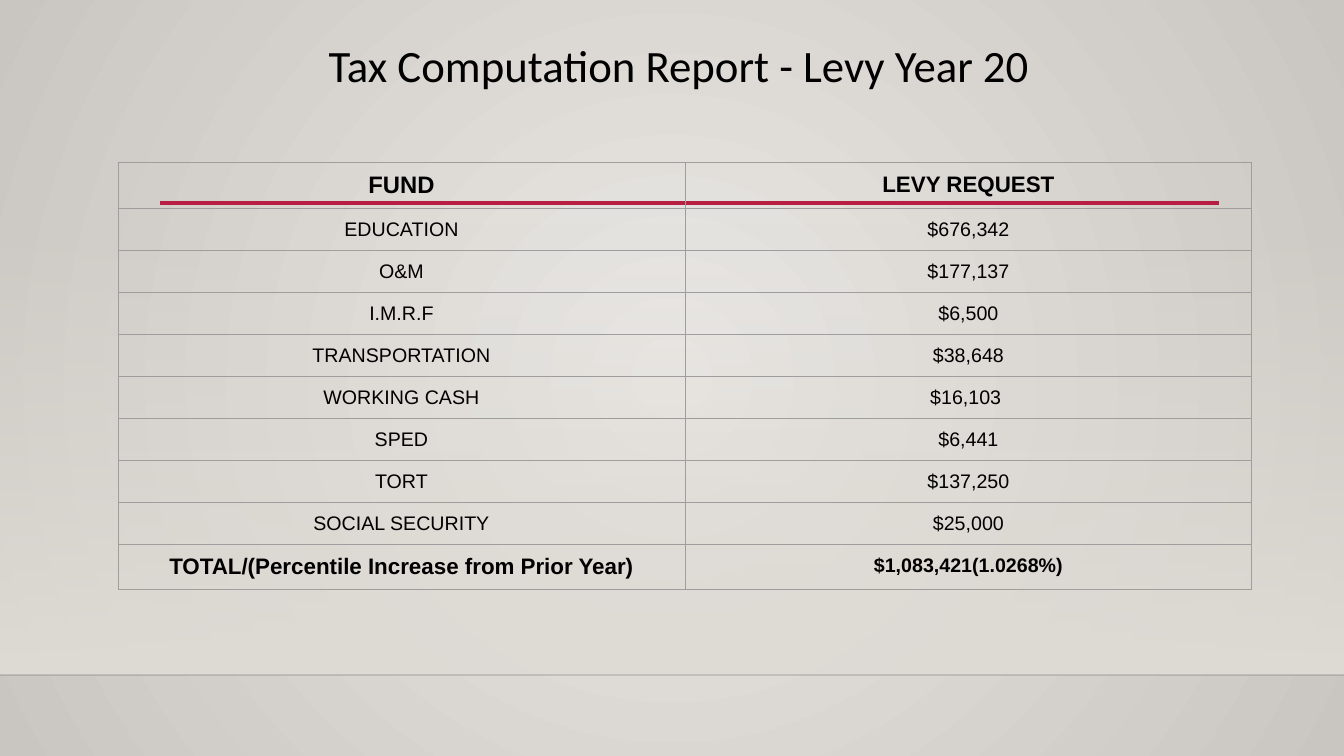
from dataclasses import dataclass

from lxml.etree import SubElement
from pptx import Presentation
from pptx.dml.color import RGBColor
from pptx.enum.shapes import MSO_CONNECTOR, MSO_SHAPE
from pptx.enum.text import MSO_ANCHOR, PP_ALIGN
from pptx.oxml import parse_xml
from pptx.oxml.ns import nsdecls, qn
from pptx.util import Pt

TITLE = "Tax Computation Report - Levy Year 20"
HEADINGS = ("FUND", "LEVY REQUEST")
LEVIES = [
    ("EDUCATION", "$676,342"),
    ("O&M", "$177,137"),
    ("I.M.R.F", "$6,500"),
    ("TRANSPORTATION", "$38,648"),
    ("WORKING CASH", "$16,103 "),
    ("SPED", "$6,441"),
    ("TORT", "$137,250"),
    ("SOCIAL SECURITY", "$25,000"),
]
TOTAL = ("TOTAL/(Percentile Increase from Prior Year)", "$1,083,421(1.0268%)")


@dataclass(frozen=True)
class Theme:
    title_font: str = "Calibri"
    table_font: str = "Arial"
    ink: str = "000000"
    accent: str = "B71E42"
    border: str = "9E9E9E"
    floor_edge: str = "000001"
    glow: str = "EBE9E6"
    rim: str = "C9C5C0"
    wall: str = "DFDBD5"
    title_size: int = 32
    heading_sizes: tuple = (17, 16)
    levy_sizes: tuple = (14, 14)
    total_sizes: tuple = (16, 14)


THEME = Theme()
SLIDE_W, SLIDE_H = 1344, 756
WALL_TOP, FLOOR_TOP = 223, 675
TABLE_LEFT, TABLE_TOP, COLUMN_W, ROW_H = 118, 162, 567, 42
CELL_INSET = 10


def px(length):
    return round(length * 914400 / 100.8)


def set_gradient(fill_parent, stops, direction):
    """Replace the solid fill of fill_parent; stops are (position, colour, opacity) in percent."""
    stop_xml = "".join(
        f'<a:gs pos="{position * 1000}"><a:srgbClr val="{colour}">'
        f'<a:alpha val="{opacity * 1000}"/></a:srgbClr></a:gs>'
        for position, colour, opacity in stops
    )
    gradient = parse_xml(
        f'<a:gradFill {nsdecls("a")} rotWithShape="1">'
        f"<a:gsLst>{stop_xml}</a:gsLst>{direction}</a:gradFill>"
    )
    solid = fill_parent.find(qn("a:solidFill"))
    fill_parent.replace(solid, gradient)


def add_rule(slide, left, right, y, colour, width, opacity=100):
    rule = slide.shapes.add_connector(
        MSO_CONNECTOR.STRAIGHT, px(left), px(y), px(right), px(y)
    )
    rule.line.color.rgb = RGBColor.from_string(colour)
    rule.line.width = Pt(width)
    properties = rule._element.spPr
    SubElement(properties, qn("a:effectLst"))
    tint = properties.find(".//" + qn("a:srgbClr"))
    SubElement(tint, qn("a:alpha"), val=str(opacity * 1000))


def write(frame, text, font_name, size, bold=False):
    paragraph = frame.paragraphs[0]
    paragraph.alignment = PP_ALIGN.CENTER
    run = paragraph.add_run()
    run.text = text
    run.font.name = font_name
    run.font.size = Pt(size)
    run.font.bold = bold
    run.font.color.rgb = RGBColor.from_string(THEME.ink)
    return paragraph


def add_borders(cell):
    properties = cell._tc.get_or_add_tcPr()
    for position, side in enumerate(("lnL", "lnR", "lnT", "lnB")):
        properties.insert(position, parse_xml(
            f'<a:{side} {nsdecls("a")} w="{Pt(0.75)}"><a:solidFill>'
            f'<a:srgbClr val="{THEME.border}"/></a:solidFill></a:{side}>'
        ))


def add_backdrop(slide):
    slide.background.fill.solid()
    set_gradient(
        slide._element.cSld.bg.bgPr,
        [(0, THEME.glow, 100), (100, THEME.rim, 100)],
        '<a:path path="circle"><a:fillToRect l="50000" t="50000" r="50000" b="50000"/></a:path>',
    )
    wall = slide.shapes.add_shape(
        MSO_SHAPE.RECTANGLE, 0, px(WALL_TOP), px(SLIDE_W), px(FLOOR_TOP - WALL_TOP)
    )
    wall.shadow.inherit = False
    wall.line.fill.background()
    wall.fill.solid()
    set_gradient(
        wall._element.spPr,
        [(0, THEME.wall, 0), (100, THEME.wall, 100)],
        '<a:lin ang="5400000" scaled="0"/>',
    )
    add_rule(slide, 0, SLIDE_W, FLOOR_TOP, THEME.floor_edge, 1, opacity=20)
    add_rule(slide, 160, 1219, 203, THEME.accent, 2.5)


def add_title(slide):
    title = slide.shapes.title
    title.left, title.top, title.width, title.height = map(px, (150, 39, 1058, 71))
    frame = title.text_frame
    frame.vertical_anchor = MSO_ANCHOR.TOP
    frame.word_wrap = True
    paragraph = write(frame, TITLE, THEME.title_font, THEME.title_size)
    paragraph.line_spacing = 0.9


def add_levy_table(slide):
    rows = [
        (HEADINGS, THEME.heading_sizes, True),
        *((levy, THEME.levy_sizes, False) for levy in LEVIES),
        (TOTAL, THEME.total_sizes, True),
    ]
    table = slide.shapes.add_table(
        len(rows), len(HEADINGS), px(TABLE_LEFT), px(TABLE_TOP),
        px(COLUMN_W * len(HEADINGS)), px(ROW_H * len(rows)),
    ).table
    table.first_row = table.horz_banding = False
    for row_index, (texts, sizes, bold) in enumerate(rows):
        for column_index, (text, size) in enumerate(zip(texts, sizes)):
            cell = table.cell(row_index, column_index)
            cell.margin_left = cell.margin_right = px(CELL_INSET)
            cell.margin_top = cell.margin_bottom = px(CELL_INSET)
            cell.fill.background()
            add_borders(cell)
            write(cell.text_frame, text, THEME.table_font, size, bold)


def main():
    deck = Presentation()
    deck.slide_width, deck.slide_height = px(SLIDE_W), px(SLIDE_H)
    title_only = deck.slide_layouts[5]
    slide = deck.slides.add_slide(title_only)
    add_backdrop(slide)
    add_title(slide)
    add_levy_table(slide)
    deck.save("out.pptx")


if __name__ == "__main__":
    main()
